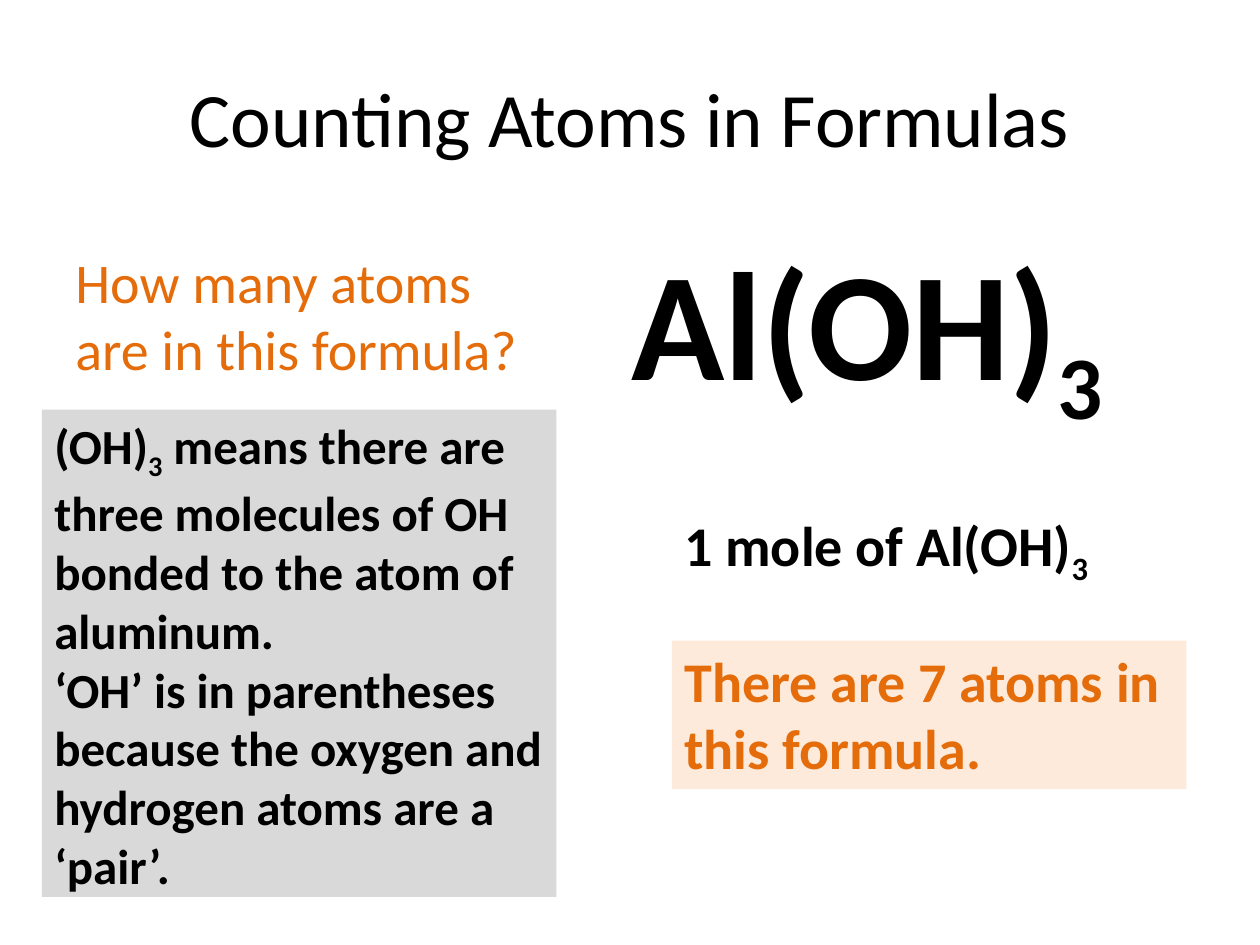
from dataclasses import dataclass

from pptx import Presentation
from pptx.dml.color import RGBColor
from pptx.enum import shapes, text
from pptx.util import Pt


@dataclass(frozen=True)
class Theme:
    font: str = "Calibri"
    ink: str = "000000"
    accent: str = "E46C0A"
    grey_panel: str = "D9D9D9"
    peach_panel: str = "FDEADA"
    title: int = 44
    formula: int = 88
    body: int = 32
    note: int = 28


theme = Theme()


def add_words(area, paragraphs, size, color, bold=True):
    """Fill an area; each paragraph is a list of runs, and a bare digit run is a subscript."""
    frame = area.text_frame
    frame.word_wrap = True
    frame.vertical_anchor = text.MSO_ANCHOR.TOP
    for index, runs in enumerate(paragraphs):
        paragraph = frame.paragraphs[0] if index == 0 else frame.add_paragraph()
        paragraph.alignment = text.PP_ALIGN.LEFT
        for words in runs:
            run = paragraph.add_run()
            run.text = words
            run.font.name = theme.font
            run.font.size = Pt(size)
            run.font.bold = bold
            run.font.color.rgb = RGBColor.from_string(color)
            if words.isdigit():
                run._r.get_or_add_rPr().set("baseline", "-25000")
    return frame


def add_panel(left, top, width, height, fill):
    panel = slide.shapes.add_shape(
        shapes.MSO_SHAPE.RECTANGLE, Pt(left), Pt(top), Pt(width), Pt(height))
    panel.shadow.inherit = False
    panel.fill.solid()
    panel.fill.fore_color.rgb = RGBColor.from_string(fill)
    panel.line.fill.background()
    return panel


prs = Presentation()
prs.slide_width, prs.slide_height = Pt(720), Pt(540)
slide = prs.slides.add_slide(prs.slide_layouts[6])

# Title
title = slide.shapes.add_textbox(Pt(36), Pt(21.6), Pt(648), Pt(90))
title_frame = add_words(title, [["Counting Atoms in Formulas"]], theme.title, theme.ink, bold=False)
title_frame.vertical_anchor = text.MSO_ANCHOR.MIDDLE
title_frame.paragraphs[0].alignment = text.PP_ALIGN.CENTER

# Question
question = slide.shapes.add_textbox(Pt(36), Pt(138), Pt(282), Pt(106.5))
add_words(question, [["How many atoms are in this formula?"]], theme.body, theme.accent, bold=False)

# Formula and its amount
formula = slide.shapes.add_textbox(Pt(354), Pt(126), Pt(294), Pt(113.5))
add_words(formula, [["Al(OH)", "3"]], theme.formula, theme.ink)
amount = slide.shapes.add_textbox(Pt(384), Pt(288), Pt(252), Pt(46))
add_words(amount, [["1 mole of Al(OH)", "3"]], theme.body, theme.ink)

# Explanation of the parentheses
explanation = add_panel(24, 234, 294, 278.5, theme.grey_panel)
add_words(explanation, [
    ["(OH)", "3", " means there are three molecules of OH bonded to the atom of aluminum."],
    ["‘OH’ is in parentheses because the oxygen and hydrogen atoms are a ‘pair’."],
], theme.note, theme.ink)

# Answer
answer = add_panel(384, 366, 294, 85, theme.peach_panel)
add_words(answer, [["There are 7 atoms in this formula."]], theme.body, theme.accent)

prs.save("out.pptx")
